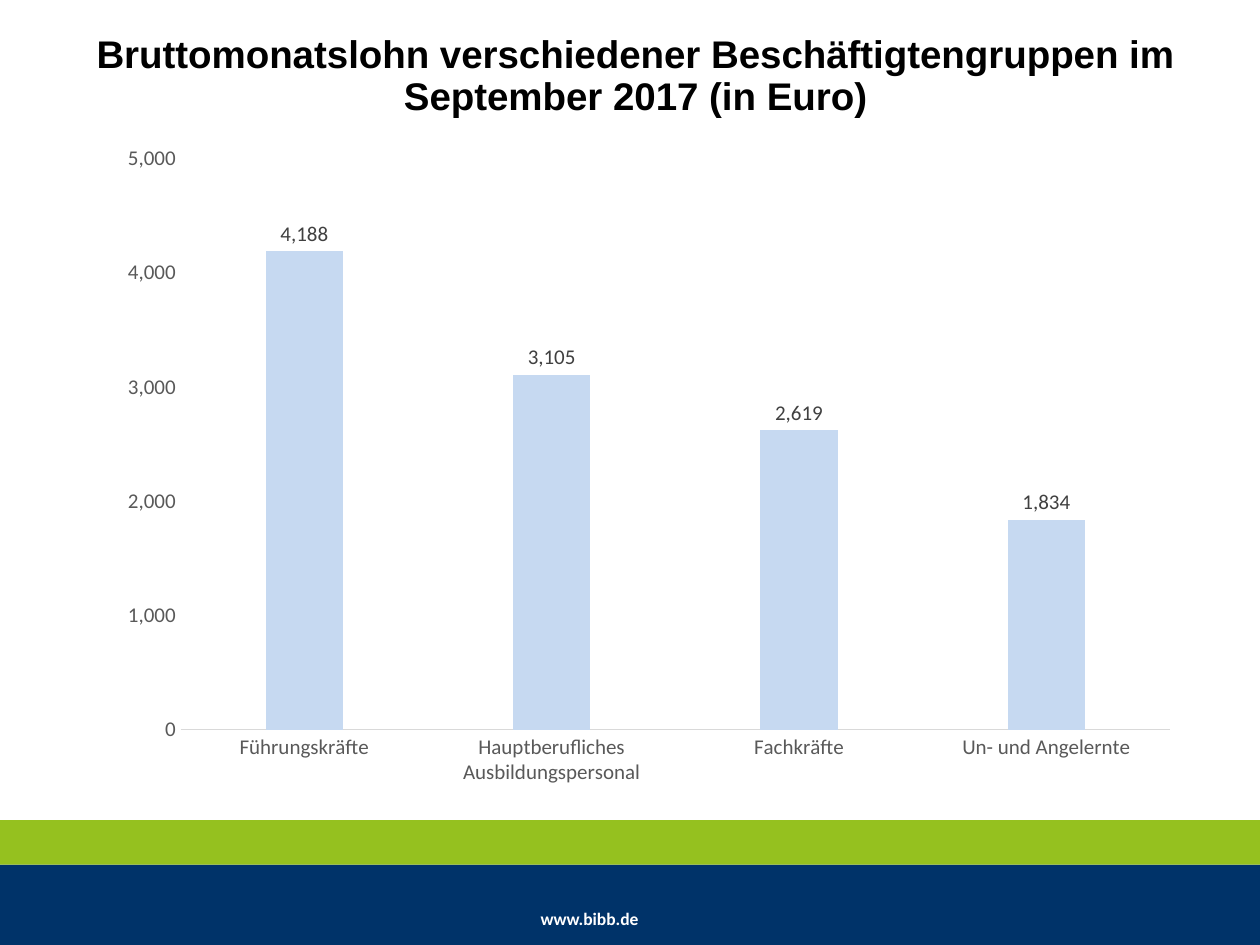
from lxml import etree
from pptx import Presentation
from pptx.chart.data import CategoryChartData
from pptx.dml.color import RGBColor
from pptx.enum.chart import XL_CHART_TYPE, XL_LABEL_POSITION, XL_TICK_MARK
from pptx.enum.shapes import MSO_SHAPE
from pptx.enum.text import MSO_ANCHOR, PP_ALIGN
from pptx.oxml import parse_xml
from pptx.oxml.ns import nsdecls, qn
from pptx.util import Inches, Pt

NAVY = RGBColor(0x00, 0x33, 0x69)
GREEN = RGBColor(0x95, 0xC1, 0x1F)
PALE_BLUE = RGBColor(0xC6, 0xD9, 0xF1)
AXIS_GREY = RGBColor(0xD9, 0xD9, 0xD9)
TEXT_GREY = RGBColor(0x59, 0x59, 0x59)
LABEL_GREY = RGBColor(0x40, 0x40, 0x40)
BLACK = RGBColor(0, 0, 0)
WHITE = RGBColor(0xFF, 0xFF, 0xFF)

WAGES = {
    "Führungskräfte": 4188,
    "Hauptberufliches Ausbildungspersonal": 3105,
    "Fachkräfte": 2619,
    "Un- und Angelernte": 1834,
}


def style_font(font, size, color, name="Calibri", bold=False):
    """Set size, colour, typeface and weight of a font."""
    font.size, font.name, font.bold = Pt(size), name, bold
    font.color.rgb = color


def write_text(shape, text, margins=(0, 0), align=PP_ALIGN.LEFT, line_spacing=1.0, **font):
    """Fill a shape with one formatted paragraph."""
    frame = shape.text_frame
    frame.word_wrap = True
    frame.vertical_anchor = MSO_ANCHOR.TOP
    frame.margin_left = frame.margin_right = Inches(margins[0])
    frame.margin_top = frame.margin_bottom = Inches(margins[1])
    paragraph = frame.paragraphs[0]
    paragraph.alignment, paragraph.line_spacing = align, line_spacing
    paragraph.space_before = Pt(0)
    run = paragraph.add_run()
    run.text = text
    style_font(run.font, **font)


class WageSlide:
    """Holds the slide and places elements by shares of its size."""

    def __init__(self, presentation):
        """Add a title-only slide to the presentation."""
        self.width, self.height = presentation.slide_width, presentation.slide_height
        self.slide = presentation.slides.add_slide(presentation.slide_layouts[5])

    def area(self, left, top, width, height):
        """Turn shares of the slide into lengths."""
        return (int(left * self.width), int(top * self.height),
                int(width * self.width), int(height * self.height))

    def title(self, text, *shares):
        """Place and fill the title placeholder."""
        title = self.slide.shapes.title
        title.left, title.top, title.width, title.height = self.area(*shares)
        write_text(title, text, margins=(0.1, 0.05), align=PP_ALIGN.CENTER,
                   line_spacing=0.9, size=22, color=BLACK, name="Arial", bold=True)

    def band(self, color, top, height):
        """Draw a full-width colour band."""
        shape = self.slide.shapes.add_shape(MSO_SHAPE.RECTANGLE, *self.area(0, top, 1, height))
        shape.shadow.inherit = False
        shape.fill.solid()
        shape.fill.fore_color.rgb = color
        shape.line.fill.background()

    def label(self, text, *shares, **font):
        """Add a text box."""
        write_text(self.slide.shapes.add_textbox(*self.area(*shares)), text, **font)

    def column_chart(self, values, plot, *shares):
        """Add a clustered column chart with a fixed inner plot area."""
        data = CategoryChartData(number_format="#,##0")
        data.categories = list(values)
        data.add_series("Series 1", list(values.values()))
        chart = self.slide.shapes.add_chart(
            XL_CHART_TYPE.COLUMN_CLUSTERED, *self.area(*shares), data).chart
        style_font(chart.font, 10, BLACK)
        chart.has_legend = chart.has_title = False
        self.style_axes(chart)
        self.style_columns(chart.plots[0])
        self.fix_plot_area(chart, plot)

    def style_axes(self, chart):
        """Format both axes."""
        for axis in (chart.category_axis, chart.value_axis):
            axis.major_tick_mark = axis.minor_tick_mark = XL_TICK_MARK.NONE
            axis.has_major_gridlines = False
            style_font(axis.tick_labels.font, 12, TEXT_GREY)
        chart.category_axis.format.line.color.rgb = AXIS_GREY
        chart.category_axis.format.line.width = Pt(0.75)
        value_axis = chart.value_axis
        value_axis.format.line.fill.background()
        value_axis.minimum_scale, value_axis.maximum_scale = 0, 5000
        value_axis.major_unit = 1000
        value_axis.tick_labels.number_format = "#,##0"
        value_axis.tick_labels.number_format_is_linked = False

    def style_columns(self, plot):
        """Format the columns and their value labels."""
        plot.gap_width, plot.overlap, plot.vary_by_categories = 219, -27, False
        fill = plot.series[0].format.fill
        fill.solid()
        fill.fore_color.rgb = PALE_BLUE
        labels = plot.series[0].data_labels
        labels.show_value = True
        labels.position = XL_LABEL_POSITION.OUTSIDE_END
        labels.number_format, labels.number_format_is_linked = "#,##0", False
        style_font(labels.font, 12, LABEL_GREY)

    def fix_plot_area(self, chart, plot):
        """Set the inner plot area as shares of the chart."""
        plot_area = chart.element.find(".//" + qn("c:plotArea"))
        for old_layout in plot_area.findall(qn("c:layout")):
            plot_area.remove(old_layout)
        layout = parse_xml(f"<c:layout {nsdecls('c')}><c:manualLayout/></c:layout>")
        settings = {"layoutTarget": "inner", "xMode": "edge", "yMode": "edge",
                    **dict(zip("xywh", plot))}
        for name, value in settings.items():
            etree.SubElement(layout[0], qn(f"c:{name}")).set("val", str(value))
        plot_area.insert(0, layout)


def main():
    """Build and save the wage slide."""
    presentation = Presentation()
    presentation.slide_width, presentation.slide_height = Inches(10), Inches(7.5)
    page = WageSlide(presentation)
    page.band(NAVY, 0.915, 0.085)
    page.band(GREEN, 0.868, 0.047)
    page.label("www.bibb.de", 0.429, 0.961, 0.102, 0.023, size=10, color=WHITE, bold=True)
    page.title("Bruttomonatslohn verschiedener Beschäftigtengruppen im September 2017 (in Euro)",
               0.052, 0.031, 0.905, 0.103)
    page.column_chart(WAGES, (0.11, 0.05, 0.86, 0.87), 0.043, 0.133, 0.913, 0.697)
    presentation.save("out.pptx")


if __name__ == "__main__":
    main()
